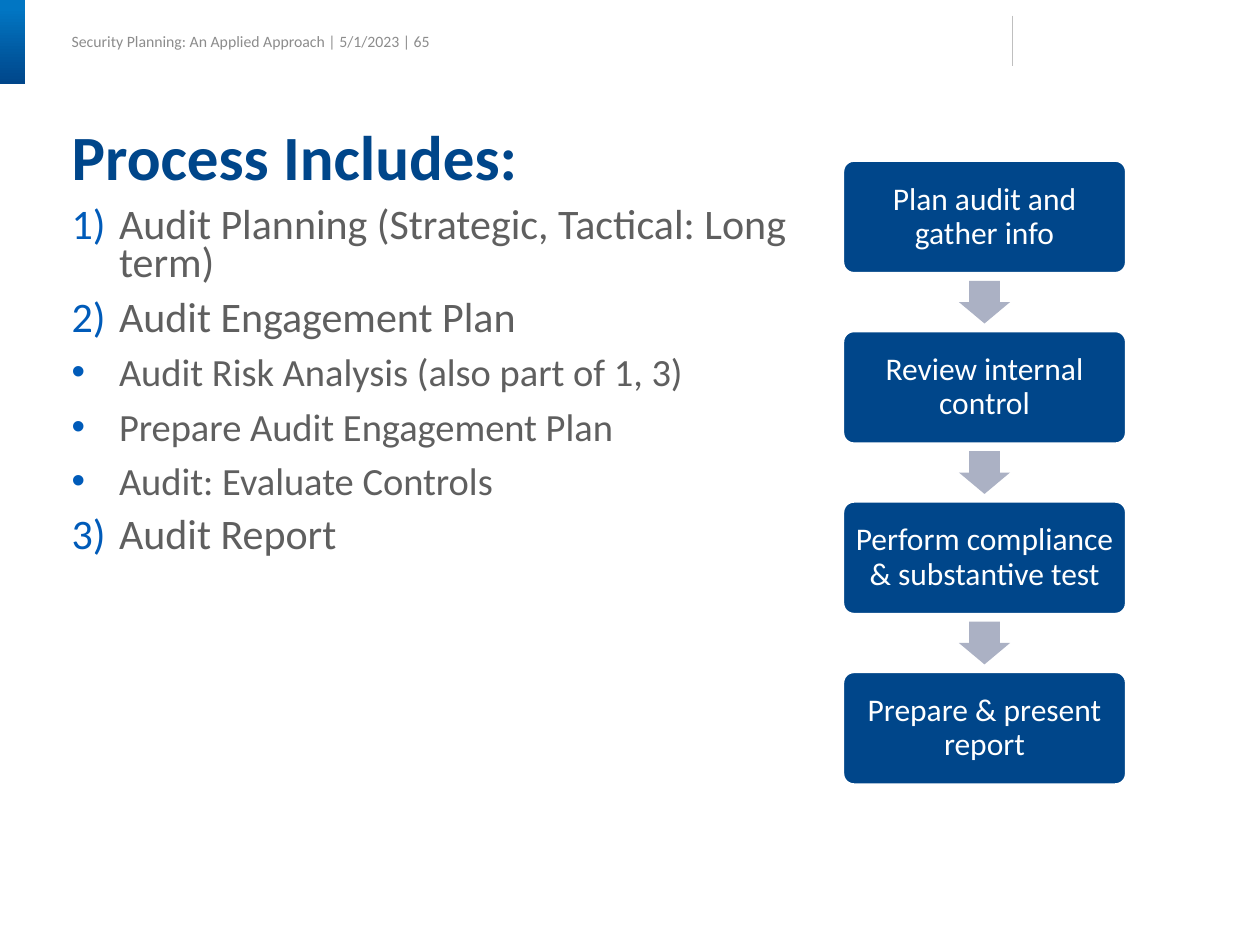
from lxml import etree
from pptx import Presentation
from pptx.dml.color import RGBColor
from pptx.enum import shapes, text
from pptx.oxml import ns
from pptx.util import Pt

COLORS = {
    "navy": "00468A", "sky": "0176C3", "bullet": "005BB9", "body": "5F5F5F",
    "header": "8C8C8C", "rule": "BFBFBF", "arrow": "ABB1C4", "white": "FFFFFF",
}
POINTS = [
    ("1)", "Audit Planning (Strategic, Tactical: Long term)"),
    ("2)", "Audit Engagement Plan"),
    ("•", "Audit Risk Analysis (also part of 1, 3)"),
    ("•", "Prepare Audit Engagement Plan"),
    ("•", "Audit: Evaluate Controls"),
    ("3)", "Audit Report"),
]
STEPS = ["Plan audit and gather info", "Review internal control",
         "Perform compliance & substantive test", "Prepare & present report"]


def color(name):
    return RGBColor.from_string(COLORS[name])


def write(paragraph, words, size, ink, font="Calibri", bold=False, align=text.PP_ALIGN.LEFT,
          spacing=1.0, before=0):
    run = paragraph.add_run()
    run.text = words
    run.font.name, run.font.size, run.font.bold = font, Pt(size), bold
    run.font.color.rgb = color(ink)
    paragraph.alignment = align
    paragraph.line_spacing = spacing
    paragraph.space_before = Pt(before)


def add_bullet(paragraph, mark, indent):
    properties = paragraph._p.get_or_add_pPr()
    properties.set("marL", str(Pt(indent)))
    properties.set("indent", str(-Pt(indent)))
    tint = etree.SubElement(properties, ns.qn("a:buClr"))
    etree.SubElement(tint, ns.qn("a:srgbClr"), val=COLORS["bullet"])
    if mark == "•":
        etree.SubElement(properties, ns.qn("a:buFont"), typeface="Arial")
        etree.SubElement(properties, ns.qn("a:buChar"), char=mark)
    else:
        etree.SubElement(properties, ns.qn("a:buFont"), typeface="+mj-lt")
        etree.SubElement(properties, ns.qn("a:buAutoNum"), type="arabicParenR",
                         startAt=mark.rstrip(")"))


class SlideBuilder:
    """Holds the font and the current slide, and adds each kind of element."""

    def __init__(self, slide, font="Calibri"):
        self.slide = slide
        self.font = font

    def frame(self, shape, insets=(0, 0, 0, 0), anchor=text.MSO_ANCHOR.TOP, wrap=True):
        frame = shape.text_frame
        frame.auto_size = text.MSO_AUTO_SIZE.NONE
        frame.word_wrap, frame.vertical_anchor = wrap, anchor
        frame.margin_left, frame.margin_top, frame.margin_right, frame.margin_bottom = map(Pt, insets)
        return frame

    def place(self, shape, box):
        shape.left, shape.top, shape.width, shape.height = map(Pt, box)

    def title(self, words, box):
        shape = self.slide.shapes.title
        self.place(shape, box)
        write(self.frame(shape).paragraphs[0], words, 36, "navy", self.font, bold=True, spacing=0.9)

    def bullets(self, points, box):
        shape = self.slide.placeholders[1]
        self.place(shape, box)
        frame = self.frame(shape)
        for index, (mark, words) in enumerate(points):
            paragraph = frame.add_paragraph() if index else frame.paragraphs[0]
            nested = mark == "•"
            paragraph.level = 4 if nested else 0
            write(paragraph, words, 22 if nested else 24, "body", self.font,
                  spacing=Pt(22), before=9)
            add_bullet(paragraph, mark, 27)

    def label(self, words, box):
        shape = self.slide.shapes.add_textbox(*map(Pt, box))
        frame = self.frame(shape, (0, 14.4, 0, 2.9), text.MSO_ANCHOR.MIDDLE, wrap=False)
        frame.margin_top, frame.margin_right = 0, Pt(14.4)
        write(frame.paragraphs[0], words, 9, "header", self.font)

    def block(self, kind, box, fill, adjustments=()):
        shape = self.slide.shapes.add_shape(kind, *map(Pt, box))
        shape.shadow.inherit = False
        shape.fill.solid()
        shape.fill.fore_color.rgb = color(fill)
        shape.line.fill.background()
        for index, value in enumerate(adjustments):
            shape.adjustments[index] = value
        return shape

    def gradient_tab(self, box):
        shape = self.block(shapes.MSO_SHAPE.RECTANGLE, box, "navy")
        shape.fill.gradient()
        shape.fill.gradient_angle = 270
        for stop, position, name in zip(shape.fill.gradient_stops, (0.1, 1), ("sky", "navy")):
            stop.position = position
            stop.color.rgb = color(name)

    def rule(self, x, top, bottom):
        line = self.slide.shapes.add_connector(
            shapes.MSO_CONNECTOR.STRAIGHT, Pt(x), Pt(top), Pt(x), Pt(bottom))
        line.line.color.rgb, line.line.width = color("rule"), Pt(0.75)
        etree.SubElement(line._element.spPr, ns.qn("a:effectLst"))

    def step(self, words, box):
        shape = self.block(shapes.MSO_SHAPE.ROUNDED_RECTANGLE, box, "navy", (0.1,))
        shape.line.color.rgb, shape.line.width = color("white"), Pt(2)
        frame = self.frame(shape, (5, 5, 5, 5), text.MSO_ANCHOR.MIDDLE)
        write(frame.paragraphs[0], words, 18, "white", self.font,
              align=text.PP_ALIGN.CENTER, spacing=0.9)

    def flow(self, steps, left, top, width, height, pitch):
        arrow_width, arrow_height = 29.2, 24.4
        for index, words in enumerate(steps):
            y = top + index * pitch
            self.step(words, (left, y, width, height))
            if index < len(steps) - 1:
                arrow_left = left + (width - arrow_width) / 2
                arrow_top = y + (height + pitch - arrow_height) / 2
                self.block(shapes.MSO_SHAPE.DOWN_ARROW,
                           (arrow_left, arrow_top, arrow_width, arrow_height),
                           "arrow", (0.6, 0.5))


def main():
    presentation = Presentation()
    presentation.slide_width, presentation.slide_height = Pt(720), Pt(540)
    builder = SlideBuilder(presentation.slides.add_slide(presentation.slide_layouts[1]))
    builder.label("Security Planning: An Applied Approach | 5/1/2023 | 65", (41, 16.8, 204.6, 16.6))
    builder.gradient_tab((0, 0, 14.4, 48))
    builder.rule(578.6, 9, 37.6)
    builder.bullets(POINTS, (41, 119.5, 432.7, 384.5))
    builder.title("Process Includes:", (41, 72, 642.2, 39.6))
    builder.flow(STEPS, left=481.4, top=91.5, width=162.4, height=64.9, pitch=97.4)
    presentation.save("out.pptx")


if __name__ == "__main__":
    main()
